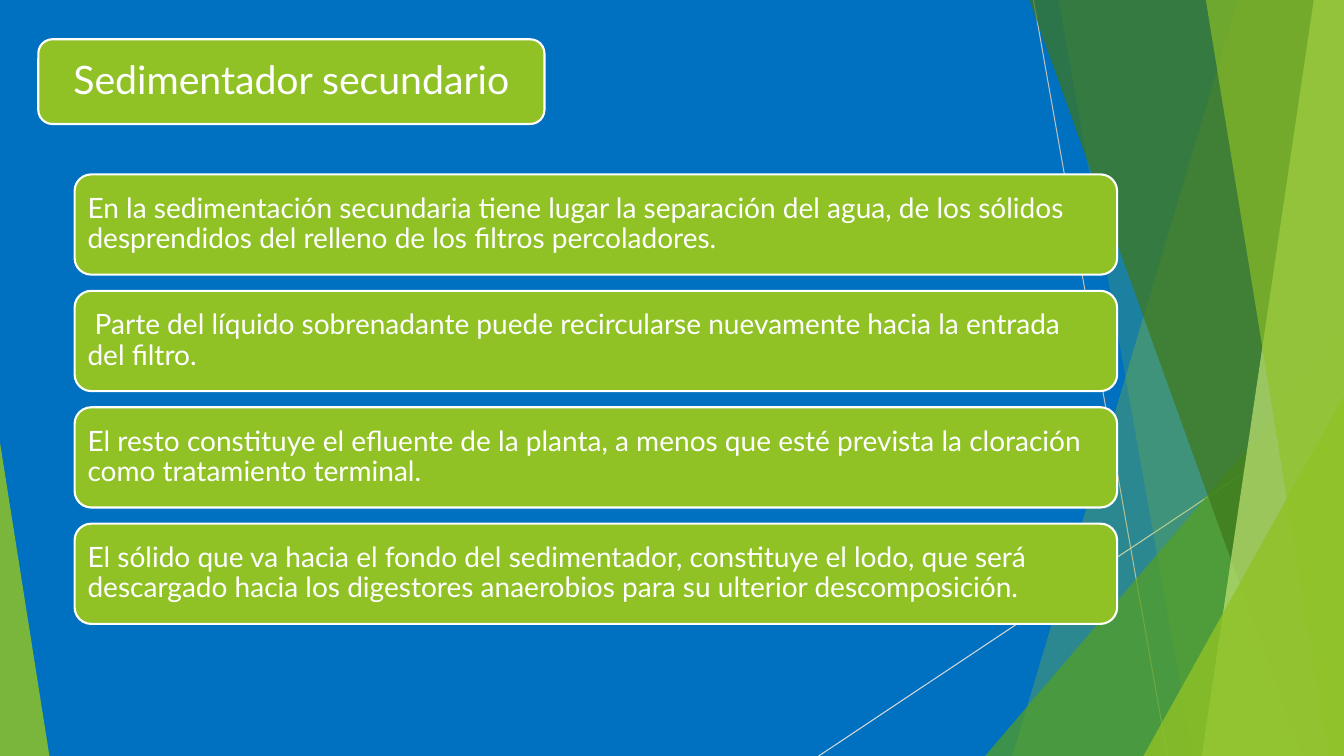
from lxml import etree
from pptx import Presentation
from pptx.dml.color import RGBColor
from pptx.enum.shapes import MSO_CONNECTOR, MSO_SHAPE
from pptx.enum.text import MSO_ANCHOR, MSO_AUTO_SIZE, PP_ALIGN
from pptx.oxml.ns import qn
from pptx.util import Inches, Pt

ROUNDED = MSO_SHAPE.ROUNDED_RECTANGLE
TRIANGLE = MSO_SHAPE.ISOSCELES_TRIANGLE
STRAIGHT = MSO_CONNECTOR.STRAIGHT
MIDDLE = MSO_ANCHOR.MIDDLE
NO_AUTOFIT = MSO_AUTO_SIZE.NONE
LEFT, CENTER = PP_ALIGN.LEFT, PP_ALIGN.CENTER

SLIDE_WIDTH, SLIDE_HEIGHT = 13.33, 7.5
FONT = "Lato"
COLORS = {
    "background": "0070C0",
    "lime": "90C226",
    "green": "54A021",
    "forest": "3F7819",
    "pale": "C0E474",
    "gray": "BFBFBF",
    "light_gray": "D9D9D9",
    "white": "FFFFFF",
}
TITLE = "Sedimentador secundario"
STATEMENTS = [
    "En la sedimentación secundaria tiene lugar la separación del agua, de los sólidos "
    "desprendidos del relleno de los filtros percoladores.",
    " Parte del líquido sobrenadante puede recircularse nuevamente hacia la entrada del filtro.",
    "El resto constituye el efluente de la planta, a menos que esté prevista la cloración "
    "como tratamiento terminal.",
    "El sólido que va hacia el fondo del sedimentador, constituye el lodo, que será "
    "descargado hacia los digestores anaerobios para su ulterior descomposición.",
]


def color(name):
    return RGBColor.from_string(COLORS[name])


def set_attributes(target, values):
    for name, value in values.items():
        setattr(target, name, value)


def fill_translucent(shape, color_name, opacity):
    """Fill without an outline; opacity is a percentage."""
    shape.shadow.inherit = False
    shape.line.fill.background()
    shape.fill.solid()
    shape.fill.fore_color.rgb = color(color_name)
    rgb = shape.element.spPr.find(qn("a:solidFill")).find(qn("a:srgbClr"))
    etree.SubElement(rgb, qn("a:alpha")).set("val", str(opacity * 1000))


def add_thin_line(slide, start, end, color_name):
    line = slide.shapes.add_connector(STRAIGHT, *map(Inches, start + end))
    line.line.color.rgb = color(color_name)
    line.line.width = Pt(0.75)
    etree.SubElement(line.element.spPr, qn("a:effectLst"))


def add_blade(slide, box, top_x, bottom_x, color_name, opacity):
    """Fill from a slanted edge to the right side of the box."""
    left, top, width, height = box
    right, bottom = left + width, top + height
    corners = [(right, top), (right, bottom), (left + bottom_x, bottom)]
    builder = slide.shapes.build_freeform(Inches(left + top_x), Inches(top))
    builder.add_line_segments([(Inches(x), Inches(y)) for x, y in corners])
    fill_translucent(builder.convert_to_shape(), color_name, opacity)


def add_corner(slide, box, width, height, peak, color_name, opacity):
    """Right triangle in a bottom corner: peak 0 is the left one, 1 the right one."""
    left = box[0] + peak * (box[2] - width)
    top = box[1] + box[3] - height
    triangle = slide.shapes.add_shape(TRIANGLE, *map(Inches, (left, top, width, height)))
    triangle.adjustments[0] = peak
    fill_translucent(triangle, color_name, opacity)


def add_facets(slide, box):
    left, top, width, height = box
    right, bottom = left + width, top + height
    add_thin_line(slide, (left + 10.25, top), (left + 11.58, bottom), "gray")
    add_thin_line(slide, (right, top + 4.03), (left + 8.12, bottom), "light_gray")
    add_blade(slide, box, 12.28, 10.04, "lime", 30)
    add_blade(slide, box, 10.5, 11.83, "lime", 20)
    add_corner(slide, box, 3.56, 4.17, 1, "green", 72)
    add_blade(slide, box, 10.21, 12.91, "forest", 70)
    add_blade(slide, box, 13.03, 11.92, "pale", 70)
    add_blade(slide, box, 11.96, 13.18, "lime", 65)
    add_corner(slide, box, 1.99, 3.57, 1, "lime", 80)
    add_corner(slide, box, 0.49, 3.11, 0, "lime", 85)


def add_panel(slide, box):
    panel = slide.shapes.add_shape(ROUNDED, *map(Inches, box))
    panel.shadow.inherit = False
    panel.fill.solid()
    panel.fill.fore_color.rgb = color("lime")
    panel.line.color.rgb = color("white")
    panel.line.width = Pt(1.5)
    return panel


def write_text(shape, text, size, alignment, inset):
    frame = shape.text_frame
    frame.text = text
    margins = {f"margin_{side}": Inches(inset) for side in ("left", "top", "right", "bottom")}
    set_attributes(frame, {"word_wrap": True, "auto_size": NO_AUTOFIT,
                           "vertical_anchor": MIDDLE, **margins})
    paragraph = frame.paragraphs[0]
    set_attributes(paragraph, {"alignment": alignment, "line_spacing": 0.9})
    set_attributes(paragraph.runs[0].font, {"name": FONT, "size": Pt(size)})
    paragraph.runs[0].font.color.rgb = color("white")


def add_title(slide, box):
    panel = add_panel(slide, box)
    title = slide.shapes.title
    title.element.addprevious(panel.element)
    left, top, width, height = map(Inches, box)
    set_attributes(title, {"left": left, "top": top, "width": width, "height": height})
    write_text(title, TITLE, 28, CENTER, 0.12)


def add_statements(slide, box, gap=0.16):
    left, top, width, height = box
    card_height = (height - gap * (len(STATEMENTS) - 1)) / len(STATEMENTS)
    for index, statement in enumerate(STATEMENTS):
        card_top = top + index * (card_height + gap)
        card = add_panel(slide, (left, card_top, width, card_height))
        write_text(card, statement, 20, LEFT, 0.08)


def main():
    presentation = Presentation()
    presentation.slide_width = Inches(SLIDE_WIDTH)
    presentation.slide_height = Inches(SLIDE_HEIGHT)
    slide = presentation.slides.add_slide(presentation.slide_layouts.get_by_name("Title Only"))
    slide.background.fill.solid()
    slide.background.fill.fore_color.rgb = color("background")
    add_facets(slide, (0, 0, SLIDE_WIDTH, SLIDE_HEIGHT))
    add_title(slide, (0.38, 0.39, 5.02, 0.84))
    add_statements(slide, (0.74, 1.73, 10.34, 4.46))
    presentation.save("out.pptx")


if __name__ == "__main__":
    main()
